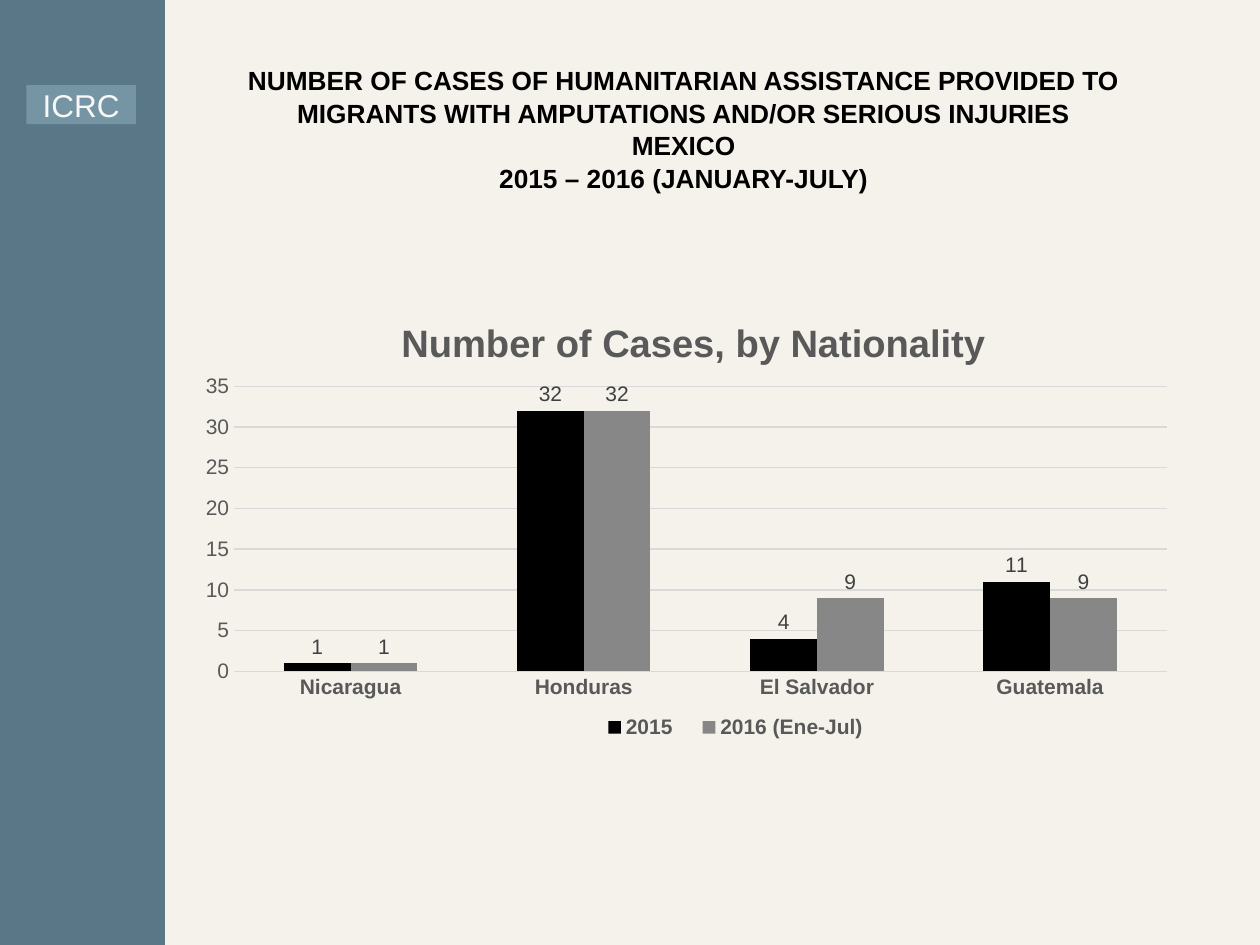
from lxml import etree
from pptx import Presentation
from pptx.chart.data import CategoryChartData
from pptx.dml.color import RGBColor
from pptx.enum.chart import XL_CHART_TYPE, XL_LABEL_POSITION, XL_LEGEND_POSITION, XL_TICK_MARK
from pptx.enum.shapes import MSO_SHAPE
from pptx.enum.text import MSO_ANCHOR, PP_ALIGN
from pptx.oxml.ns import qn
from pptx.util import Inches, Pt

COLUMNS = XL_CHART_TYPE.COLUMN_CLUSTERED
OUTSIDE_END = XL_LABEL_POSITION.OUTSIDE_END
BOTTOM = XL_LEGEND_POSITION.BOTTOM
NO_TICKS = XL_TICK_MARK.NONE
RECTANGLE = MSO_SHAPE.RECTANGLE
MIDDLE = MSO_ANCHOR.MIDDLE
CENTER = PP_ALIGN.CENTER

CREAM = RGBColor(0xF5, 0xF2, 0xEB)
SLATE = RGBColor(0x59, 0x77, 0x86)
LIGHT_SLATE = RGBColor(0x76, 0x95, 0xA4)
OFF_WHITE = RGBColor(0xF8, 0xF8, 0xF8)
BLACK = RGBColor(0, 0, 0)
GRAY = RGBColor(0x87, 0x87, 0x87)
AXIS_GRAY = RGBColor(0x59, 0x59, 0x59)
LABEL_GRAY = RGBColor(0x40, 0x40, 0x40)
GRID_GRAY = RGBColor(0xD9, 0xD9, 0xD9)

FONT = "Arial"
HEADING = (
    "NUMBER OF CASES OF HUMANITARIAN ASSISTANCE PROVIDED TO "
    "MIGRANTS WITH AMPUTATIONS AND/OR SERIOUS INJURIES\v"
    "MEXICO\v2015 – 2016 (JANUARY-JULY)"
)
COUNTRIES = ["Nicaragua", "Honduras", "El Salvador", "Guatemala"]
PERIODS = [
    ("2015", [1, 32, 4, 11], BLACK),
    ("2016 (Ene-Jul)", [1, 32, 9, 9], GRAY),
]


def style_font(font, size, color, bold=False):
    font.name = FONT
    font.size = Pt(size)
    font.bold = bold
    font.color.rgb = color


def write_text(frame, text, size, color, bold=False, line_spacing=1.0):
    frame.word_wrap = True
    frame.vertical_anchor = MIDDLE
    paragraph = frame.paragraphs[0]
    paragraph.text = text
    paragraph.alignment = CENTER
    paragraph.line_spacing = line_spacing
    style_font(paragraph.font, size, color, bold)
    for run in paragraph.runs:
        style_font(run.font, size, color, bold)


def add_rectangle(slide, box, color):
    shape = slide.shapes.add_shape(RECTANGLE, *map(Inches, box))
    shape.shadow.inherit = False
    shape.fill.solid()
    shape.fill.fore_color.rgb = color
    shape.line.fill.background()
    return shape


def add_sidebar(slide, box):
    left, top, width, height = box
    add_rectangle(slide, box, SLATE)
    badge_box = (left + 0.16 * width, top + 0.09 * height, 0.87, 0.31)
    badge = add_rectangle(slide, badge_box, LIGHT_SLATE)
    write_text(badge.text_frame, "ICRC", 18, OFF_WHITE)


def add_heading(slide, box):
    text_box = slide.shapes.add_textbox(*map(Inches, box))
    write_text(text_box.text_frame, HEADING, 15, BLACK, bold=True, line_spacing=1.04)


def place_in_chart(element, inner=False, **shares):
    """Fix a chart part's place, given as shares of the chart's size."""
    for old in element.findall(qn("c:layout")):
        element.remove(old)
    layout = etree.Element(qn("c:layout"))
    manual = etree.SubElement(layout, qn("c:manualLayout"))
    if inner:
        etree.SubElement(manual, qn("c:layoutTarget")).set("val", "inner")
    for name in ("x", "y"):
        etree.SubElement(manual, qn(f"c:{name}Mode")).set("val", "edge")
    for name, share in shares.items():
        etree.SubElement(manual, qn(f"c:{name}")).set("val", str(share))
    before = [child for child in element
              if child.tag in (qn("c:tx"), qn("c:legendPos"), qn("c:legendEntry"))]
    element.insert(len(before), layout)


def style_axis(axis, bold=False):
    axis.major_tick_mark = axis.minor_tick_mark = NO_TICKS
    axis.format.line.fill.background()
    style_font(axis.tick_labels.font, 12, AXIS_GRAY, bold)


def add_cases_chart(slide, box):
    data = CategoryChartData()
    data.categories = COUNTRIES
    for name, values, _ in PERIODS:
        data.add_series(name, values)
    chart = slide.shapes.add_chart(COLUMNS, *map(Inches, box), data).chart
    style_font(chart.font, 10, BLACK)

    chart.has_title = True
    title_frame = chart.chart_title.text_frame
    title_frame.text = "Number of Cases, by Nationality"
    style_font(title_frame.paragraphs[0].runs[0].font, 21.8, AXIS_GRAY, bold=True)
    chart.chart_title.include_in_layout = False

    style_axis(chart.category_axis, bold=True)
    value_axis = chart.value_axis
    style_axis(value_axis)
    value_axis.minimum_scale, value_axis.maximum_scale, value_axis.major_unit = 0, 35, 5
    grid_line = value_axis.major_gridlines.format.line
    grid_line.color.rgb = GRID_GRAY
    grid_line.width = Pt(0.75)

    chart.has_legend = True
    chart.legend.position = BOTTOM
    chart.legend.include_in_layout = False
    style_font(chart.legend.font, 12, AXIS_GRAY, bold=True)

    plot = chart.plots[0]
    plot.gap_width, plot.overlap = 150, 0
    plot.vary_by_categories = False
    for series, (_, _, color) in zip(plot.series, PERIODS):
        series.format.fill.solid()
        series.format.fill.fore_color.rgb = color
        labels = series.data_labels
        labels.show_value = True
        labels.position = OUTSIDE_END
        style_font(labels.font, 12, LABEL_GRAY)

    plot_area = chart.category_axis._element.getparent()
    place_in_chart(plot_area, inner=True, x=0.05, y=0.22, w=0.93, h=0.61)
    place_in_chart(chart.chart_title._element, x=0.21, y=0.06)
    place_in_chart(chart.legend._element, x=0.4, y=0.91, w=0.3, h=0.08)


def main():
    presentation = Presentation()
    presentation.slide_width, presentation.slide_height = Inches(10), Inches(7.5)
    slide = presentation.slides.add_slide(presentation.slide_layouts[6])
    slide.background.fill.solid()
    slide.background.fill.fore_color.rgb = CREAM
    add_sidebar(slide, (0, 0, 1.31, 7.5))
    add_heading(slide, (1.44, 0.84, 7.97, 0.36))
    add_cases_chart(slide, (1.46, 2.25, 7.96, 3.71))
    presentation.save("out.pptx")


if __name__ == "__main__":
    main()
